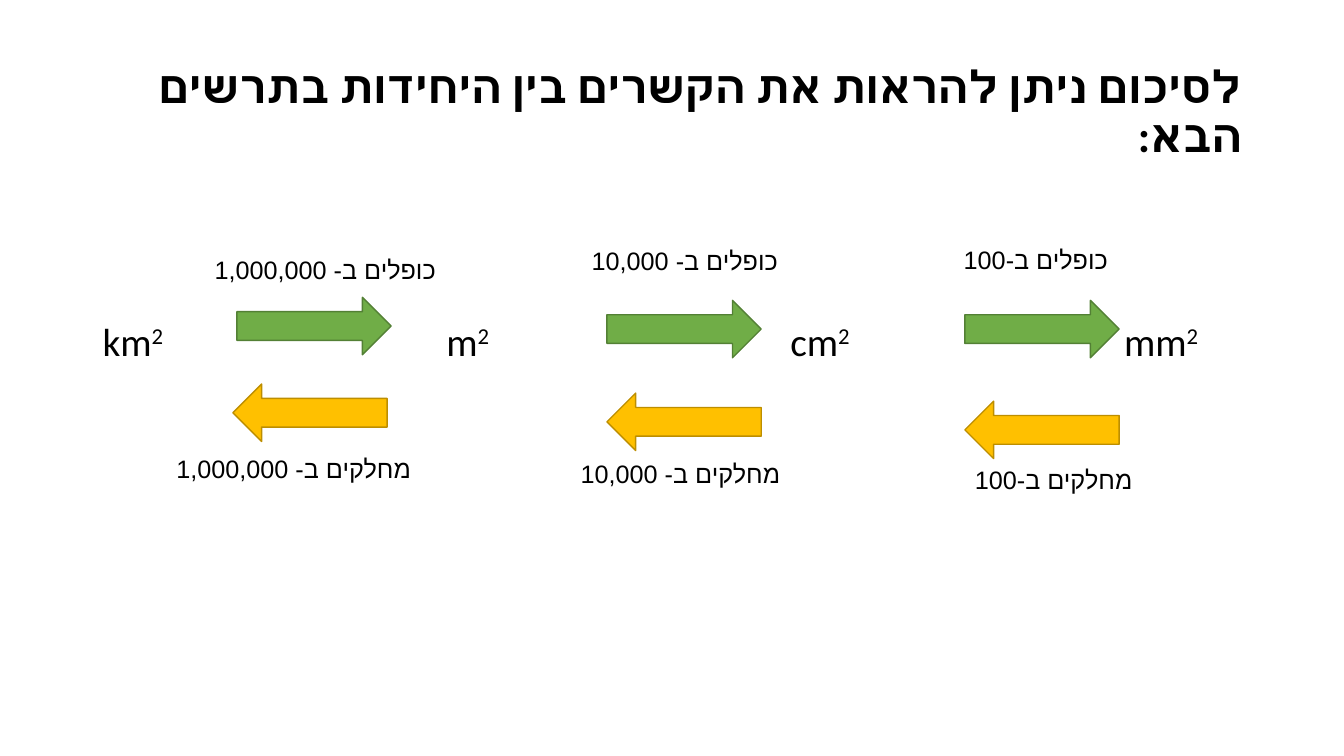
from lxml.etree import SubElement
from pptx import Presentation
from pptx.dml.color import RGBColor
from pptx.enum.shapes import MSO_SHAPE as SHAPE
from pptx.enum.text import MSO_ANCHOR as ANCHOR, MSO_AUTO_SIZE as FIT, PP_ALIGN as ALIGN
from pptx.oxml.ns import qn
from pptx.util import Inches, Pt

COLORS = {
    "text": "000000",
    "multiply": "70AD47",
    "multiply_line": "538035",
    "divide": "FFC000",
    "divide_line": "BD8E00",
}
FONT = "Calibri"
LABEL_SCRIPT_FONT = "Arial"

# factor text, multiply arrow, multiply label, divide arrow, divide label (left, top)
STEPS = [
    (" 1,000,000", (2.35, 2.95), (2.03, 2.47), (2.31, 3.81), (1.65, 4.45)),
    (" 10,000", (6.02, 2.98), (5.77, 2.38), (6.02, 3.9), (5.66, 4.5)),
    ("100", (9.57, 2.98), (9.46, 2.37), (9.57, 3.98), (9.57, 4.56)),
]
# unit and the left edge of its box
UNITS = [("km", 0.92), ("m", 4.33), ("cm", 7.74), ("mm", 11.05)]
UNIT_TOP = 3.15


def rgb(name):
    return RGBColor.from_string(COLORS[name])


class UnitSlide:
    def __init__(self, prs):
        self.slide = prs.slides.add_slide(prs.slide_layouts[5])

    def style(self, p, size, script_font=FONT, bold=False):
        """Set the paragraph font and the font of its Hebrew letters."""
        p.font.name, p.font.size, p.font.bold = FONT, Pt(size), bold
        p.font.color.rgb = rgb("text")
        for r in p.runs:
            r.font.name = FONT
            SubElement(r._r.get_or_add_rPr(), qn("a:cs"), typeface=script_font)

    def title(self, text):
        sp = self.slide.shapes.title
        sp.left, sp.top = Inches(0.92), Inches(0.4)
        sp.width, sp.height = Inches(11.5), Inches(1.45)
        tf = sp.text_frame
        tf.text = text
        tf.auto_size, tf.vertical_anchor = FIT.NONE, ANCHOR.MIDDLE
        p = tf.paragraphs[0]
        p.alignment, p.line_spacing = ALIGN.RIGHT, 0.9
        p._p.get_or_add_pPr().set("rtl", "1")
        self.style(p, 32, bold=True)

    def text_box(self, text, at, width, height):
        sp = self.slide.shapes.add_textbox(
            Inches(at[0]), Inches(at[1]), Inches(width), Inches(height))
        tf = sp.text_frame
        tf.word_wrap, tf.auto_size = True, FIT.SHAPE_TO_FIT_TEXT
        tf.text = text
        return tf.paragraphs[0]

    def unit(self, name, left):
        """Write a unit with a raised 2."""
        p = self.text_box(name, (left, UNIT_TOP), 1.2, 0.53)
        p.line_spacing = 0.9
        r = p.add_run()
        r.text = "2"
        r._r.get_or_add_rPr().set("baseline", "30000")
        self.style(p, 28)

    def label(self, text, at):
        self.style(self.text_box(text, at, 3.28, 0.4), 18, LABEL_SCRIPT_FONT)

    def arrow(self, kind, color, at):
        sp = self.slide.shapes.add_shape(
            kind, Inches(at[0]), Inches(at[1]), Inches(1.53), Inches(0.57))
        sp.shadow.inherit = False
        sp.fill.solid()
        sp.fill.fore_color.rgb = rgb(color)
        sp.line.color.rgb = rgb(color + "_line")
        sp.line.width = Pt(1)


def main():
    prs = Presentation()
    prs.slide_width, prs.slide_height = Inches(13.33), Inches(7.5)
    s = UnitSlide(prs)
    s.title("לסיכום ניתן להראות את הקשרים בין היחידות בתרשים הבא:")
    for name, left in UNITS:
        s.unit(name, left)
    for factor, multiply_at, multiply_label, divide_at, divide_label in STEPS:
        s.arrow(SHAPE.RIGHT_ARROW, "multiply", multiply_at)
        s.label("כופלים ב-" + factor, multiply_label)
        s.arrow(SHAPE.LEFT_ARROW, "divide", divide_at)
        s.label("מחלקים ב-" + factor, divide_label)
    prs.save("out.pptx")


if __name__ == "__main__":
    main()
